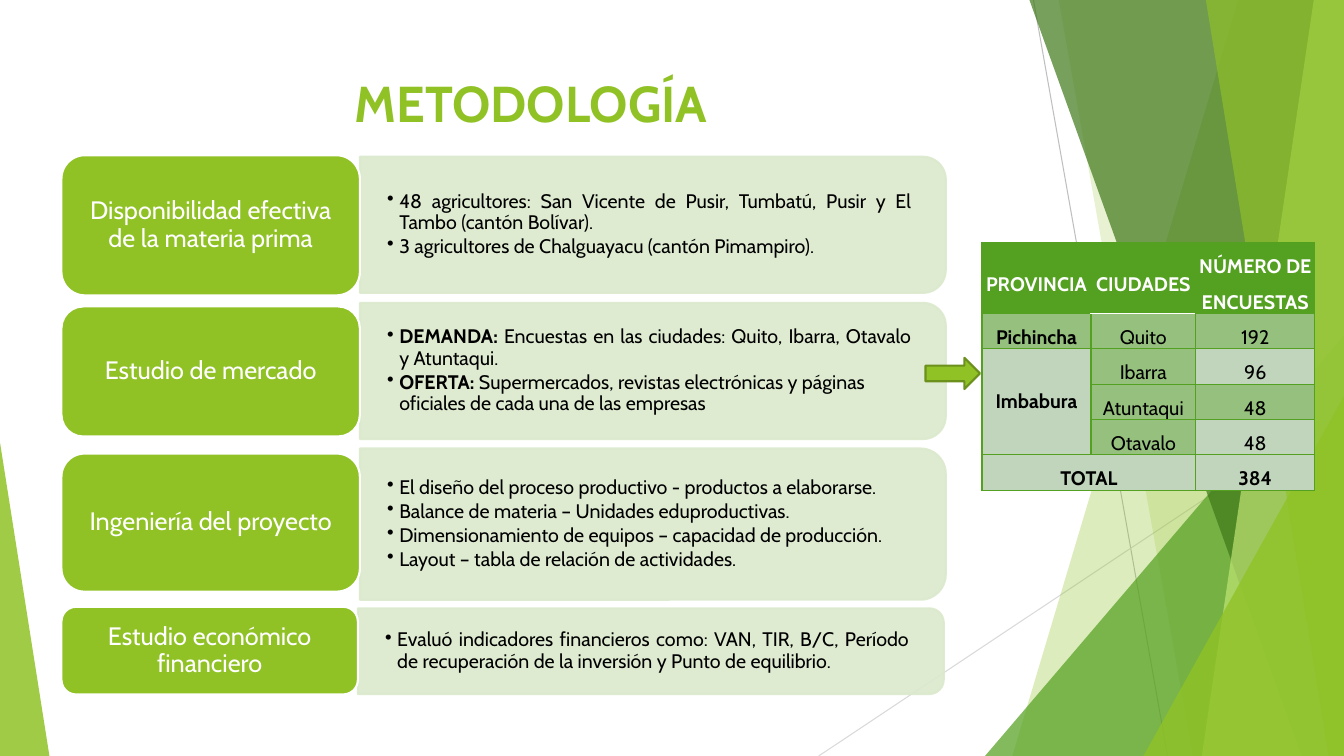
import pptx
import pptx.util
import pptx.dml.color
import pptx.enum.shapes
import pptx.enum.text
import pptx.oxml
import pptx.oxml.ns
from lxml import etree

Inches = pptx.util.Inches
Pt = pptx.util.Pt
RGBColor = pptx.dml.color.RGBColor
SHAPE = pptx.enum.shapes.MSO_SHAPE
ALIGN = pptx.enum.text.PP_ALIGN
ANCHOR = pptx.enum.text.MSO_ANCHOR
qn = pptx.oxml.ns.qn

FONT = "Cabin"
WHITE = RGBColor(0xFF, 0xFF, 0xFF)
BLACK = RGBColor(0, 0, 0)
LIME = RGBColor(0x90, 0xC2, 0x26)
GREEN = RGBColor(0x54, 0xA0, 0x21)
DARK = RGBColor(0x3F, 0x78, 0x19)
PALE = RGBColor(0xC0, 0xE4, 0x74)
OLIVE = RGBColor(0x6B, 0x90, 0x1C)
MIST = RGBColor(0xDB, 0xE9, 0xCD)
GRAY = RGBColor(0xBF, 0xBF, 0xBF)
SILVER = RGBColor(0xD9, 0xD9, 0xD9)
MID = RGBColor(0x95, 0xC0, 0x7D)
LIGHT = RGBColor(0xC0, 0xD5, 0xBC)

# Shards of the backdrop: top left, top right, bottom left, colour, opacity
SHARDS_LOW = [(12.28, 10.04, LIME, 30), (10.5, 11.83, LIME, 20)]
SHARDS_HIGH = [(10.21, 12.91, DARK, 70), (13.03, 11.92, PALE, 70),
               (11.96, 13.18, LIME, 65)]

# Stages: panel middle, panel height, card top, card height, split, label, items
STAGES = [
    (2.23, 1.35, 1.54, 1.39, 3.57, "Disponibilidad efectiva de la materia prima", [
        ("", "48 agricultores: San Vicente de Pusir, Tumbatú, Pusir y El Tambo (cantón Bolívar)."),
        ("", "3 agricultores de Chalguayacu (cantón Pimampiro).")]),
    (3.68, 1.35, 3.04, 1.29, 3.57, "Estudio de mercado", [
        ("DEMANDA: ", "Encuestas en las ciudades: Quito, Ibarra, Otavalo y Atuntaqui."),
        ("OFERTA: ", "Supermercados, revistas electrónicas y páginas oficiales de cada una de las empresas")]),
    (5.2, 1.5, 4.5, 1.37, 3.57, "Ingeniería del proyecto", [
        ("", "El diseño del proceso productivo - productos a elaborarse."),
        ("", "Balance de materia – Unidades eduproductivas."),
        ("", "Dimensionamiento de equipos – capacidad de producción."),
        ("", "Layout – tabla de relación de actividades.")]),
    (6.46, 0.85, 6.02, 0.87, 3.55, "Estudio económico financiero", [
        ("", "Evaluó indicadores financieros como: VAN, TIR, B/C, Período de "
             "recuperación de la inversión y Punto de equilibrio.")]),
]

COLS = [1.08, 1.04, 1.18]
ROWS = [
    ("PROVINCIA", "CIUDADES", "NÚMERO DE ENCUESTAS"),
    ("Pichincha", "Quito", "192"),
    ("Imbabura", "Ibarra", "96"),
    ("", "Atuntaqui", "48"),
    ("", "Otavalo", "48"),
    ("TOTAL", "", "384"),
]


def paint(shape, color, alpha=100, edge=None):
    shape.shadow.inherit = False
    shape.fill.solid()
    shape.fill.fore_color.rgb = color
    parts = [shape.fill]
    if edge is None:
        shape.line.fill.background()
    else:
        shape.line.color.rgb = edge
        shape.line.width = Pt(1.5)
        parts.append(shape.line.fill)
    if alpha < 100:
        for clr in shape._element.spPr.iter(qn("a:srgbClr")):
            etree.SubElement(clr, qn("a:alpha"), val=str(alpha * 1000))


def block(slide, kind, left, top, width, height, color, alpha=100, edge=None):
    shape = slide.shapes.add_shape(
        kind, Inches(left), Inches(top), Inches(width), Inches(height))
    paint(shape, color, alpha, edge)
    return shape


def shard(slide, top, base, color, alpha):
    build = slide.shapes.build_freeform(Inches(top), 0, scale=1.0)
    build.add_line_segments([(Inches(x), Inches(y)) for x, y in
                             [(13.33, 0), (13.33, 7.5), (base, 7.5)]], close=True)
    paint(build.convert_to_shape(), color, alpha)


def wedge(slide, left, top, width, tip, color, alpha):
    shape = block(slide, SHAPE.ISOSCELES_TRIANGLE, left, top, width, 7.5 - top, color, alpha)
    shape.adjustments[0] = tip


def ray(slide, x1, y1, x2, y2, color):
    line = slide.shapes.add_connector(
        pptx.enum.shapes.MSO_CONNECTOR.STRAIGHT,
        Inches(x1), Inches(y1), Inches(x2), Inches(y2))
    line.line.color.rgb = color
    line.line.width = Pt(0.75)
    etree.SubElement(line._element.spPr, qn("a:effectLst"))


def inset(frame, side, end):
    frame.margin_left = frame.margin_right = Inches(side)
    frame.margin_top = frame.margin_bottom = Inches(end)


def style(para, size, color, bold=None, align=None, space=None):
    para.font.name = FONT
    para.font.size = Pt(size)
    para.font.color.rgb = color
    para.font.bold = bold
    para.alignment = align
    para.line_spacing = space


def textbox(slide, left, top, width, height):
    box = slide.shapes.add_textbox(
        Inches(left), Inches(top), Inches(width), Inches(height))
    box.text_frame.word_wrap = True
    return box.text_frame


def bullet(para):
    para.level = 1
    props = para._p.get_or_add_pPr()
    props.set("marL", str(Inches(0.12)))
    props.set("indent", str(-Inches(0.12)))
    mark = etree.Element(qn("a:buChar"), char="•")
    props.find(qn("a:defRPr")).addprevious(mark)


def stage(slide, mid, tall, top, high, split, label, items):
    # Panel, turned so that its round corners face right
    wide = 5.81
    panel = block(slide, SHAPE.ROUND_2_SAME_RECTANGLE, split + (wide - tall) / 2,
                  mid - wide / 2, tall, wide, MIST, 90, MIST)
    panel.rotation = 90
    frame = textbox(slide, split, mid - tall * 0.45, 5.74, tall * 0.9)
    frame.vertical_anchor = ANCHOR.MIDDLE
    inset(frame, 0.27, 0.14)
    for i, (lead, text) in enumerate(items):
        para = frame.paragraphs[0] if i == 0 else frame.add_paragraph()
        if lead:
            run = para.add_run()
            run.text = lead
            run.font.bold = True
        para.add_run().text = text
        style(para, 14, BLACK, align=ALIGN.JUSTIFY if i == 0 else ALIGN.LEFT, space=0.9)
        para.space_after = Pt(2.1)
        bullet(para)
    # Card with the stage name
    card = block(slide, SHAPE.ROUNDED_RECTANGLE, 0.61, top, split - 0.61, high,
                 LIME, edge=WHITE)
    frame = card.text_frame
    frame.word_wrap = True
    frame.vertical_anchor = ANCHOR.MIDDLE
    inset(frame, 0.07, 0.04)
    frame.text = label
    style(frame.paragraphs[0], 18, WHITE, align=ALIGN.CENTER, space=0.9)


def border(cell, side, color, width):
    line = etree.SubElement(cell._tc.get_or_add_tcPr(), qn("a:ln" + side),
                            w=str(Pt(width)))
    fill = etree.SubElement(line, qn("a:solidFill"))
    etree.SubElement(fill, qn("a:srgbClr"), val=str(color))


def shade(row, col):
    if row == 0:
        return GREEN
    if row < 5 and (col == 1 or row == 1 or (row == 3 and col == 2)):
        return MID
    return LIGHT


def survey(slide):
    table = slide.shapes.add_table(
        len(ROWS), len(COLS), Inches(9.74), Inches(2.41),
        Inches(sum(COLS)), Inches(2.45)).table
    for col, width in enumerate(COLS):
        table.columns[col].width = Inches(width)
    for row, texts in enumerate(ROWS):
        table.rows[row].height = Inches(0.7 if row == 0 else 0.35)
        for col, text in enumerate(texts):
            cell = table.cell(row, col)
            for side in "LRTB":
                seam = col == 1 and (row, side) in [(0, "B"), (1, "T")]
                border(cell, side, WHITE if seam else GREEN, 1.5 if seam else 1)
            cell.fill.solid()
            cell.fill.fore_color.rgb = shade(row, col)
            cell.vertical_anchor = ANCHOR.MIDDLE
            inset(cell, 0, 0)
            if text:
                cell.text = text
                style(cell.text_frame.paragraphs[0], 14, BLACK if row else WHITE,
                      row in (0, 5) or col == 0, ALIGN.CENTER,
                      1.0 if text == "Imbabura" else 1.5)
    table.cell(2, 0).merge(table.cell(4, 0))
    table.cell(5, 0).merge(table.cell(5, 1))


def main():
    deck = pptx.Presentation()
    deck.slide_width, deck.slide_height = Inches(13.33), Inches(7.5)
    slide = deck.slides.add_slide(deck.slide_layouts[6])
    # Backdrop
    ray(slide, 10.25, 0, 11.58, 7.5, GRAY)
    ray(slide, 13.33, 4.03, 8.12, 7.5, SILVER)
    for item in SHARDS_LOW:
        shard(slide, *item)
    wedge(slide, 9.77, 3.33, 3.56, 1, GREEN, 72)
    for item in SHARDS_HIGH:
        shard(slide, *item)
    wedge(slide, 11.34, 3.93, 1.99, 1, LIME, 80)
    wedge(slide, 0, 4.39, 0.49, 0, LIME, 85)
    # Title
    title = textbox(slide, 3.42, 0.67, 6.84, 1.44)
    title.text = "METODOLOGÍA"
    style(title.paragraphs[0], 36, LIME, True)
    # Stages, survey table and the arrow between them
    for item in STAGES:
        stage(slide, *item)
    survey(slide)
    block(slide, SHAPE.RIGHT_ARROW, 9.18, 3.55, 0.54, 0.31, LIME, edge=OLIVE)
    deck.save("out.pptx")


if __name__ == "__main__":
    main()
